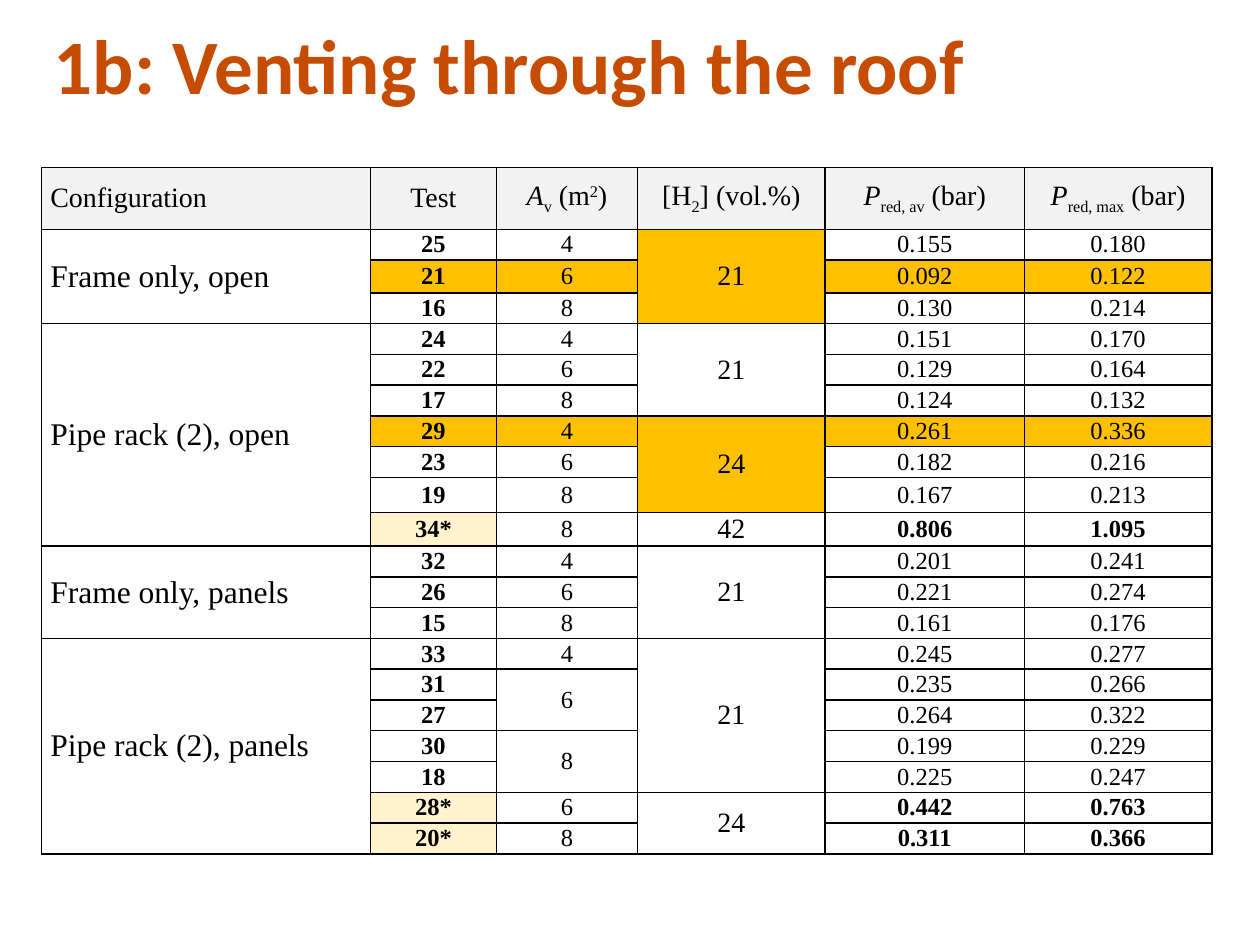
"""Build a slide with a table of roof venting tests."""
from typing import NamedTuple

from lxml import etree
from pptx import Presentation
from pptx.dml.color import RGBColor
from pptx.enum.text import MSO_ANCHOR, PP_ALIGN
from pptx.oxml.ns import qn
from pptx.util import Inches, Pt

LEFT, CENTER = PP_ALIGN.LEFT, PP_ALIGN.CENTER
TOP, MIDDLE = MSO_ANCHOR.TOP, MSO_ANCHOR.MIDDLE
COLORS = {"title": "C54C00", "text": "000000", "line": "000000",
          "head": "F2F2F2", "gold": "FFC000", "pale": "FFF2CC"}
SERIF = "Times New Roman"
SUB, SUPER = -25000, 30000


class Part(NamedTuple):
    text: str
    base: int = 0
    slant: bool = False


class Trial(NamedTuple):
    config: str
    test: str
    area: str
    gas: str
    mean: str
    peak: str


class Style(NamedTuple):
    size: int
    gap: int = 0
    bold: bool = False
    fill: str = ""


HEADS = [
    [Part("Configuration")],
    [Part("Test")],
    [Part("A", slant=True), Part("v", SUB), Part(" (m"), Part("2", SUPER), Part(")")],
    [Part("[H"), Part("2", SUB), Part("] (vol.%)")],
    [Part("P", slant=True), Part("red, av", SUB), Part(" (bar)")],
    [Part("P", slant=True), Part("red, max", SUB), Part(" (bar)")],
]
TRIALS = [
    Trial("Frame only, open", "25", "4", "21", "0.155", "0.180"),
    Trial("", "21", "6", "", "0.092", "0.122"),
    Trial("", "16", "8", "", "0.130", "0.214"),
    Trial("Pipe rack (2), open", "24", "4", "21", "0.151", "0.170"),
    Trial("", "22", "6", "", "0.129", "0.164"),
    Trial("", "17", "8", "", "0.124", "0.132"),
    Trial("", "29", "4", "24", "0.261", "0.336"),
    Trial("", "23", "6", "", "0.182", "0.216"),
    Trial("", "19", "8", "", "0.167", "0.213"),
    Trial("", "34*", "8", "42", "0.806", "1.095"),
    Trial("Frame only, panels", "32", "4", "21", "0.201", "0.241"),
    Trial("", "26", "6", "", "0.221", "0.274"),
    Trial("", "15", "8", "", "0.161", "0.176"),
    Trial("Pipe rack (2), panels", "33", "4", "21", "0.245", "0.277"),
    Trial("", "31", "6", "", "0.235", "0.266"),
    Trial("", "27", "", "", "0.264", "0.322"),
    Trial("", "30", "8", "", "0.199", "0.229"),
    Trial("", "18", "", "", "0.225", "0.247"),
    Trial("", "28*", "6", "24", "0.442", "0.763"),
    Trial("", "20*", "8", "", "0.311", "0.366"),
]
WIDTHS = [2.61, 1, 1.12, 1.49, 1.58, 1.49]
SIZES = [18, 14, 14, 16, 14, 14]
TALL = {0: 0.49, 2: 0.26, 9: 0.28}
HEIGHT = 5.43
GOLD = {(row, col) for row in (2, 7) for col in (1, 2, 4, 5)} | {(1, 3), (7, 3)}


def paint(font, size: int, name: str, color: str, bold: bool) -> None:
    """Set the look of a font."""
    font.size, font.name, font.bold = Pt(size), name, bold
    font.color.rgb = RGBColor.from_string(COLORS[color])


def frame(cell) -> None:
    """Draw a thin line on all four sides of a cell."""
    props = cell._tc.get_or_add_tcPr()
    for side in ("a:lnL", "a:lnR", "a:lnT", "a:lnB"):
        line = etree.SubElement(props, qn(side), w=str(Pt(1)))
        fill = etree.SubElement(line, qn("a:solidFill"))
        etree.SubElement(fill, qn("a:srgbClr"), val=COLORS["line"])


def dress(cell, style: Style) -> None:
    """Set the borders, fill and margins of a cell."""
    frame(cell)
    if style.fill:
        cell.fill.solid()
        cell.fill.fore_color.rgb = RGBColor.from_string(COLORS[style.fill])
    else:
        cell.fill.background()
    cell.vertical_anchor = MIDDLE
    cell.margin_left = cell.margin_right = Inches(0.07)
    cell.margin_top = cell.margin_bottom = 0


def write(cell, parts: list[Part], style: Style, align) -> None:
    """Put styled runs into a cell."""
    para = cell.text_frame.paragraphs[0]
    para.alignment = align
    para.space_before = para.space_after = Pt(style.gap)
    for part in parts:
        run = para.add_run()
        run.text = part.text
        paint(run.font, style.size, SERIF, "text", style.bold)
        run.font.italic = part.slant
        if part.base:
            run._r.get_or_add_rPr().set("baseline", str(part.base))


def choose(row: int, col: int, trial: Trial) -> Style:
    """Pick the style of a body cell."""
    star = trial.test.endswith("*")
    fill = "gold" if (row, col) in GOLD else "pale" if star and col == 1 else ""
    return Style(SIZES[col], 0 if col else 6, col == 1 or (star and col > 3), fill)


def join(table, col: int) -> None:
    """Merge each filled cell of a column with the empty ones below it."""
    starts = [row for row, trial in enumerate(TRIALS, 1) if trial[col]]
    for first, after in zip(starts, starts[1:] + [len(TRIALS) + 1]):
        if after - first > 1:
            table.cell(first, col).merge(table.cell(after - 1, col))


def add_title(slide) -> None:
    """Add the slide title."""
    box = slide.shapes.add_textbox(Inches(0.33), Inches(0.17), Inches(9.42), Inches(1.15))
    text = box.text_frame
    text.word_wrap, text.vertical_anchor = True, TOP
    text.text = "1b: Venting through the roof"
    para = text.paragraphs[0]
    para.line_spacing = 0.9
    paint(para.runs[0].font, 44, "Calibri", "title", True)


def add_tests(slide) -> None:
    """Add the table of tests."""
    count = len(TRIALS) + 1
    table = slide.shapes.add_table(count, len(WIDTHS), Inches(0.33), Inches(1.33),
                                   Inches(sum(WIDTHS)), Inches(HEIGHT)).table
    table.first_row = table.horz_banding = False
    for col, width in enumerate(WIDTHS):
        table.columns[col].width = Inches(width)
    plain = (HEIGHT - sum(TALL.values())) / (count - len(TALL))
    for row in range(count):
        table.rows[row].height = Inches(TALL.get(row, plain))
        for col in range(len(WIDTHS)):
            if row:
                trial = TRIALS[row - 1]
                style = choose(row, col, trial)
                parts = [Part(trial[col])] if trial[col] else []
            else:
                style, parts = Style(16, 3, fill="head"), HEADS[col]
            cell = table.cell(row, col)
            dress(cell, style)
            write(cell, parts, style, CENTER if col else LEFT)
    for col in range(len(WIDTHS)):
        join(table, col)


def main() -> None:
    """Build and save the slide."""
    deck = Presentation()
    deck.slide_width, deck.slide_height = Inches(10), Inches(7.5)
    slide = deck.slides.add_slide(deck.slide_layouts[6])
    add_title(slide)
    add_tests(slide)
    deck.save("out.pptx")


if __name__ == "__main__":
    main()
